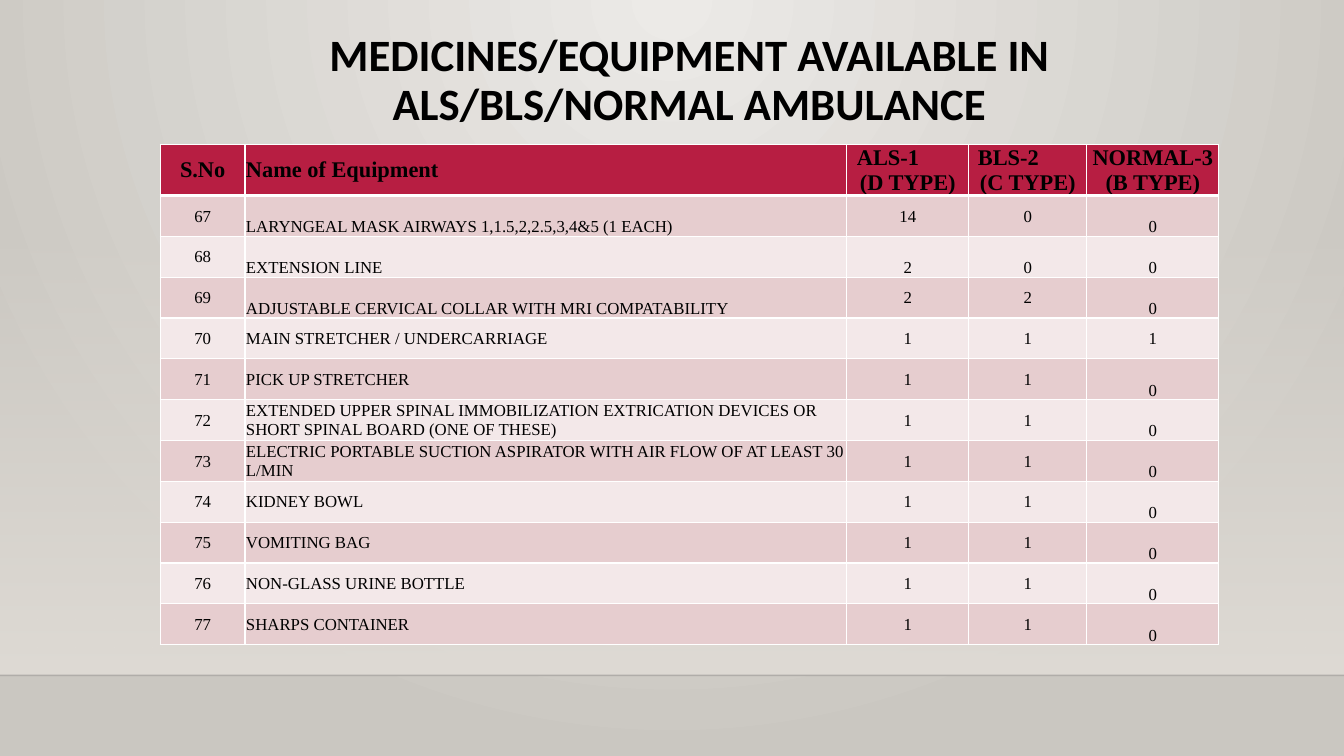
from lxml import etree
from pptx import Presentation
from pptx.dml.color import RGBColor
from pptx.enum.shapes import MSO_CONNECTOR, MSO_SHAPE
from pptx.enum.text import MSO_ANCHOR, PP_ALIGN
from pptx.oxml.ns import qn
from pptx.util import Inches, Pt

TOP, MIDDLE, BOTTOM = MSO_ANCHOR.TOP, MSO_ANCHOR.MIDDLE, MSO_ANCHOR.BOTTOM
LEFT, CENTER = PP_ALIGN.LEFT, PP_ALIGN.CENTER
RECTANGLE, STRAIGHT = MSO_SHAPE.RECTANGLE, MSO_CONNECTOR.STRAIGHT

WIDTH, HEIGHT, FLOOR = 13.33, 7.5, 6.7
TITLE = "MEDICINES/EQUIPMENT AVAILABLE IN ALS/BLS/NORMAL AMBULANCE"
COLUMNS = [0.84, 5.97, 1.21, 1.17, 1.31]
HEADER_HEIGHT, BODY_HEIGHT = 0.51, 4.46
HEADERS = [["S.No"], ["Name of Equipment"], ["ALS-1", "(D TYPE)"],
           ["BLS-2", "(C TYPE)"], ["NORMAL-3", "(B TYPE)"]]
HEADER_INDENTS = {"ALS-1": 0.09, "BLS-2": 0.08}
FIRST_NUMBER = 67
EQUIPMENT = [
    ("LARYNGEAL MASK AIRWAYS 1,1.5,2,2.5,3,4&5 (1 EACH)", 14, 0, 0, "mbmmb"),
    ("EXTENSION LINE", 2, 0, 0, "mbbbb"),
    ("ADJUSTABLE CERVICAL COLLAR WITH MRI COMPATABILITY", 2, 2, 0, "mbmmb"),
    ("MAIN STRETCHER / UNDERCARRIAGE", 1, 1, 1, "mmmmm"),
    ("PICK UP STRETCHER", 1, 1, 0, "mmmmb"),
    ("EXTENDED UPPER SPINAL IMMOBILIZATION EXTRICATION DEVICES OR "
     "SHORT SPINAL BOARD (ONE OF THESE)", 1, 1, 0, "mmmmb"),
    ("ELECTRIC PORTABLE SUCTION ASPIRATOR WITH AIR FLOW OF AT LEAST 30 L/MIN",
     1, 1, 0, "mmmmb"),
    ("KIDNEY BOWL", 1, 1, 0, "mmmmb"),
    ("VOMITING BAG", 1, 1, 0, "mmmmb"),
    ("NON-GLASS URINE BOTTLE", 1, 1, 0, "mmmmb"),
    ("SHARPS CONTAINER", 1, 1, 0, "mmmmb"),
]


def color(value):
    """Turn a hex string into a colour."""
    return RGBColor.from_string(value)


def add_child(parent, tag, **attributes):
    """Append a DrawingML element and return it."""
    return etree.SubElement(parent, qn(tag), attributes)


def add_run(p, text, size, font, bold):
    """Add one black run to a paragraph."""
    r = p.add_run()
    r.text = text
    r.font.size, r.font.name, r.font.bold = Pt(size), font, bold
    r.font.color.rgb = color("000000")


def make_gradient(parent, stops):
    """Replace the solid fill of an element with a gradient and return it."""
    solid = parent.find(qn("a:solidFill"))
    grad = etree.Element(qn("a:gradFill"), rotWithShape="1")
    parent.replace(solid, grad)
    stop_list = add_child(grad, "a:gsLst")
    for position, value, opacity in stops:
        stop = add_child(stop_list, "a:gs", pos=str(position * 1000))
        rgb = add_child(stop, "a:srgbClr", val=value)
        add_child(rgb, "a:alpha", val=str(opacity * 1000))
    return grad


def add_backdrop(s):
    """Draw the radial background, the wall shade and the floor line."""
    s.background.fill.solid()
    bg = s.element.find(".//" + qn("p:bgPr"))
    grad = make_gradient(bg, [(0, "ECEAE7", 100), (100, "CAC7C1", 100)])
    radial = add_child(grad, "a:path", path="circle")
    add_child(radial, "a:fillToRect", l="43000", t="0", r="43000", b="100000")

    wall = s.shapes.add_shape(RECTANGLE, 0, Inches(2.21), Inches(WIDTH), Inches(FLOOR - 2.21))
    wall.shadow.inherit = False
    wall.line.fill.background()
    wall.fill.solid()
    grad = make_gradient(wall.element.spPr, [(0, "DFDBD5", 0), (100, "DFDBD5", 100)])
    add_child(grad, "a:lin", ang="5400000", scaled="0")

    line = s.shapes.add_connector(STRAIGHT, 0, Inches(FLOOR), Inches(WIDTH), Inches(FLOOR))
    line.line.width = Pt(1)
    line.line.color.rgb = color("000001")
    rgb = line.element.spPr.find(".//" + qn("a:srgbClr"))
    add_child(rgb, "a:alpha", val="20000")
    add_child(line.element.spPr, "a:effectLst")


def add_title(s):
    """Place and format the title placeholder."""
    sp = s.shapes.title
    sp.left, sp.top, sp.width, sp.height = map(Inches, (1.59, 0.28, 10.5, 1.15))
    tf = sp.text_frame
    tf.word_wrap = True
    tf.vertical_anchor = TOP
    p = tf.paragraphs[0]
    p.alignment, p.line_spacing = CENTER, 0.9
    add_run(p, TITLE, 32, "Calibri", True)


def set_borders(cell, bottom_width):
    """Give a cell white borders."""
    tc_pr = cell._tc.get_or_add_tcPr()
    for side, width in (("L", 1), ("R", 1), ("T", 1), ("B", bottom_width)):
        ln = add_child(tc_pr, "a:ln" + side, w=str(Pt(width)))
        add_child(add_child(ln, "a:solidFill"), "a:srgbClr", val="FFFFFF")


def fill_cell(cell, lines, fill, anchor, align, header=False):
    """Write and format one table cell."""
    set_borders(cell, 3 if header else 1)
    cell.fill.solid()
    cell.fill.fore_color.rgb = color(fill)
    cell.margin_left = cell.margin_right = cell.margin_top = Inches(0.01)
    cell.margin_bottom = 0
    cell.vertical_anchor = anchor
    tf = cell.text_frame
    for i, text in enumerate(lines):
        p = tf.add_paragraph() if i else tf.paragraphs[0]
        p.alignment = align
        if text in HEADER_INDENTS:
            p.alignment = LEFT
            p._p.get_or_add_pPr().set("marL", str(Inches(HEADER_INDENTS[text])))
        add_run(p, text, 16 if header else 12, "Times New Roman", header)


def add_equipment_table(s):
    """Add the equipment table with its header and banded rows."""
    frame = s.shapes.add_table(len(EQUIPMENT) + 1, len(COLUMNS), Inches(1.59), Inches(1.43),
                               Inches(sum(COLUMNS)), Inches(HEADER_HEIGHT + BODY_HEIGHT))
    table = frame.table
    for column, width in zip(table.columns, COLUMNS):
        column.width = Inches(width)
    for row in table.rows:
        row.height = Inches(BODY_HEIGHT / len(EQUIPMENT))
    table.rows[0].height = Inches(HEADER_HEIGHT)

    aligns = [CENTER, LEFT, CENTER, CENTER, CENTER]
    for col, lines in enumerate(HEADERS):
        anchor = BOTTOM if col == len(HEADERS) - 1 else MIDDLE
        fill_cell(table.cell(0, col), lines, "B71E42", anchor, aligns[col], True)
    for row, (*values, anchors) in enumerate(EQUIPMENT):
        fill = "F3E8E9" if row % 2 else "E6CDCF"
        for col, value in enumerate([FIRST_NUMBER + row, *values]):
            anchor = BOTTOM if anchors[col] == "b" else MIDDLE
            fill_cell(table.cell(row + 1, col), [str(value)], fill, anchor, aligns[col])


def main():
    """Build the slide and save it."""
    prs = Presentation()
    prs.slide_width, prs.slide_height = Inches(WIDTH), Inches(HEIGHT)
    s = prs.slides.add_slide(prs.slide_layouts[5])
    add_backdrop(s)
    add_title(s)
    add_equipment_table(s)
    prs.save("out.pptx")


if __name__ == "__main__":
    main()
